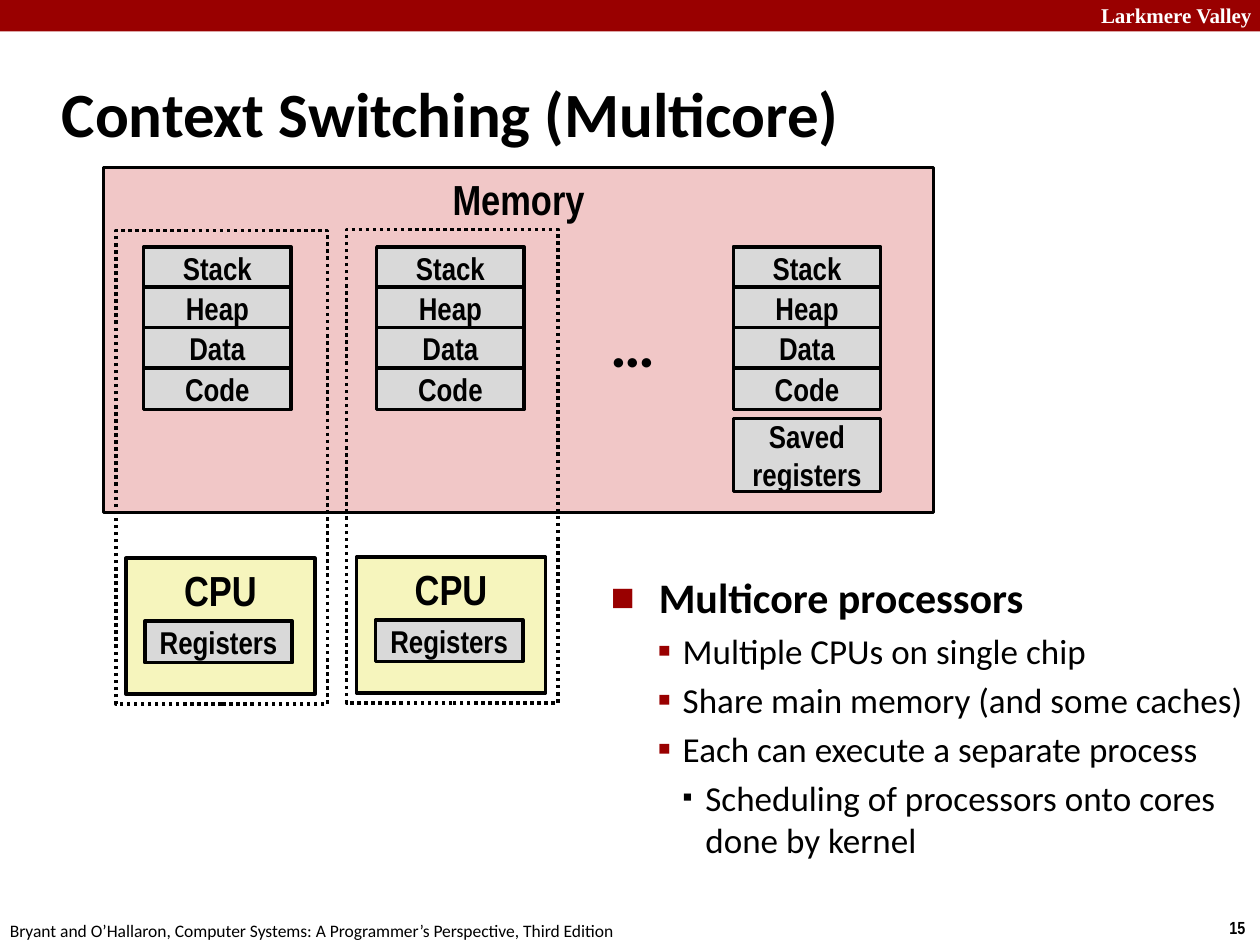
from dataclasses import dataclass
from typing import Optional

from lxml import etree
from pptx import Presentation
from pptx import util as u
from pptx.dml.color import RGBColor
from pptx.enum import dml, shapes, text
from pptx.oxml import ns

RED = RGBColor(0x99, 0x00, 0x00)
PINK = RGBColor(0xF1, 0xC7, 0xC7)
CREAM = RGBColor(0xF6, 0xF5, 0xBD)
GRAY = RGBColor(0xD9, 0xD9, 0xD9)
BLACK = RGBColor(0, 0, 0)
WHITE = RGBColor(0xFF, 0xFF, 0xFF)

COLS, ROWS = 40, 30
WIDE, HIGH = u.Inches(10), u.Inches(7.5)
SANS, SLIM, SERIF = "Calibri", "Arial Narrow", "Times New Roman"
TOP, MID = text.MSO_ANCHOR.TOP, text.MSO_ANCHOR.MIDDLE


@dataclass(frozen=True)
class Area:
    col: float
    row: float
    wide: float
    high: float

    def shift(self, col: float, row: float) -> "Area":
        return Area(self.col + col, self.row + row, self.wide, self.high)

    def box(self) -> tuple[int, int, int, int]:
        dx, dy = WIDE / COLS, HIGH / ROWS
        return (round(self.col * dx), round(self.row * dy),
                round(self.wide * dx), round(self.high * dy))


@dataclass(frozen=True)
class Style:
    size: float
    face: str = SANS
    bold: bool = True
    color: RGBColor = BLACK


@dataclass(frozen=True)
class Label:
    words: str
    area: Area
    style: Style
    wrap: bool = False


@dataclass(frozen=True)
class Level:
    style: Style
    left: float
    hang: float
    mark: str
    scale: int
    tint: RGBColor


@dataclass(frozen=True)
class Point:
    words: str
    depth: int


HEAD, PART = Style(24, SLIM), Style(18, SLIM)
TITLE = Area(1.56, 1.92, 37.12, 3.32)
BODY = Area(19, 17.96, 21.68, 11.68)
MEMORY = Area(3.28, 5.32, 26.36, 10.96)
CELL = Area(0, 7.84, 4.68, 1.32)
STEP = 1.28
STACKS = (4.56, 11.96, 23.28)
PARTS = ("Stack", "Heap", "Data", "Code")
SAVED = Area(STACKS[-1], 13.28, 4.68, 2.32)
CORES = (Area(3.68, 7.32, 6.72, 15.04), Area(11, 7.28, 6.72, 15.04))

LABELS = (
    Label("Larkmere Valley", Area(34.56, -0.12, 5.72, 1.2),
          Style(12, SERIF, color=WHITE), True),
    Label("15", Area(38.64, 28.92, 1.36, 1.08), Style(10, SLIM)),
    Label("Bryant and O’Hallaron, Computer Systems: "
          "A Programmer’s Perspective, Third Edition",
          Area(-0.08, 29, 20.32, 1.08), Style(10, bold=False)),
    Label("…", Area(19, 9.48, 2.24, 2.84), Style(36)),
)

LEVELS = (
    Level(Style(24), 0.38, 0.38, "■", 60, RED),
    Level(Style(20, bold=False), 0.57, 0.2, "▪", 110, RED),
    Level(Style(20, bold=False), 0.75, 0.18, "▪", 80, BLACK),
)
POINTS = (
    Point("Multicore processors", 0),
    Point("Multiple CPUs on single chip", 1),
    Point("Share main memory (and some caches)", 1),
    Point("Each can execute a separate process", 1),
    Point("Scheduling of processors onto cores done by kernel", 2),
)


def dress(para, style: Style) -> None:
    font = para.font
    font.name, font.size, font.bold = style.face, u.Pt(style.size), style.bold
    font.color.rgb = style.color


def block(slide, area: Area, fill: Optional[RGBColor], words: str = "",
          style: Style = PART, anchor=MID, edge: bool = True):
    shape = slide.shapes.add_shape(shapes.MSO_SHAPE.RECTANGLE, *area.box())
    shape.shadow.inherit = False
    if fill is None:
        shape.fill.background()
    else:
        shape.fill.solid()
        shape.fill.fore_color.rgb = fill
    if edge:
        shape.line.color.rgb = BLACK
        shape.line.width = u.Pt(2)
    else:
        shape.line.fill.background()
    if words:
        frame = shape.text_frame
        frame.word_wrap, frame.vertical_anchor = True, anchor
        para = frame.paragraphs[0]
        para.text, para.alignment = words, text.PP_ALIGN.CENTER
        dress(para, style)
    return shape


def write(slide, label: Label) -> None:
    frame = slide.shapes.add_textbox(*label.area.box()).text_frame
    frame.word_wrap = label.wrap
    para = frame.paragraphs[0]
    para.text = label.words
    dress(para, label.style)


def bullet(para, level: Level) -> None:
    props = para._p.get_or_add_pPr()
    props.set("marL", str(u.Inches(level.left)))
    props.set("indent", str(-u.Inches(level.hang)))
    tint = etree.SubElement(props, ns.qn("a:buClr"))
    etree.SubElement(tint, ns.qn("a:srgbClr"), val=str(level.tint))
    etree.SubElement(props, ns.qn("a:buSzPct"), val=str(level.scale * 1000))
    etree.SubElement(props, ns.qn("a:buFont"), typeface=SANS)
    etree.SubElement(props, ns.qn("a:buChar"), char=level.mark)


def outline(slide) -> None:
    frame = slide.shapes.add_textbox(*BODY.box()).text_frame
    frame.word_wrap = True
    for num, point in enumerate(POINTS):
        para = frame.add_paragraph() if num else frame.paragraphs[0]
        level = LEVELS[point.depth]
        para.text, para.level = point.words, point.depth
        para.space_before = u.Pt(level.style.size * 0.2)
        dress(para, level.style)
        bullet(para, level)


def title(slide, words: str) -> None:
    shape = slide.shapes.title
    shape.left, shape.top, shape.width, shape.height = TITLE.box()
    frame = shape.text_frame
    frame.auto_size = text.MSO_AUTO_SIZE.NONE
    frame.vertical_anchor = MID
    para = frame.paragraphs[0]
    para.text, para.alignment = words, text.PP_ALIGN.LEFT
    dress(para, Style(36))


def core(slide, area: Area) -> None:
    unit = Area(area.col, area.row, 6, 4.32).shift(0.32, 10.4)
    block(slide, unit, CREAM, "CPU", HEAD, TOP)
    regs = Area(area.col, area.row, CELL.wide, CELL.high).shift(0.92, 12.4)
    block(slide, regs, GRAY, "Registers")
    frame = block(slide, area, None)
    frame.line.dash_style = dml.MSO_LINE.ROUND_DOT


def main() -> None:
    deck = Presentation()
    deck.slide_width, deck.slide_height = WIDE, HIGH
    slide = deck.slides.add_slide(deck.slide_layouts[5])
    title(slide, "Context Switching (Multicore)")
    block(slide, Area(0, 0, COLS, 1), RED, edge=False)
    block(slide, MEMORY, PINK, "Memory", HEAD, TOP)
    for col in STACKS:
        for num, name in enumerate(PARTS):
            block(slide, CELL.shift(col, num * STEP), GRAY, name)
    block(slide, SAVED, GRAY, "Saved registers")
    for area in CORES:
        core(slide, area)
    for label in LABELS:
        write(slide, label)
    outline(slide)
    deck.save("out.pptx")


if __name__ == "__main__":
    main()
